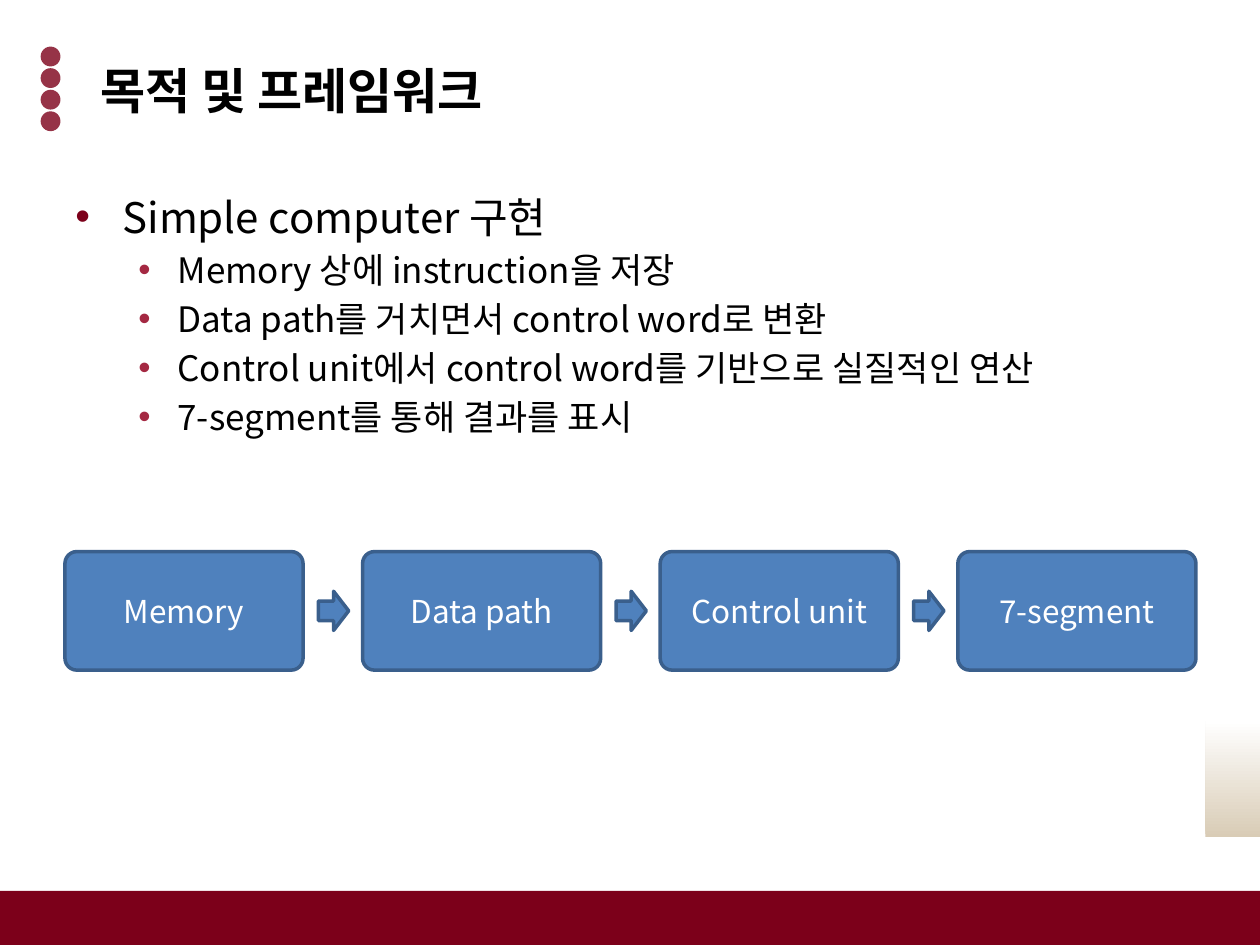
import pptx
import pptx.dml.color
import pptx.enum.shapes
import pptx.enum.text
import pptx.oxml
import pptx.oxml.ns
import pptx.util
from lxml import etree

Cm, Pt = pptx.util.Cm, pptx.util.Pt
RGBColor = pptx.dml.color.RGBColor
SHAPE = pptx.enum.shapes.MSO_SHAPE
ANCHOR = pptx.enum.text.MSO_ANCHOR
ALIGN = pptx.enum.text.PP_ALIGN
qn = pptx.oxml.ns.qn

FONT = "Noto Sans CJK KR"
MAROON = RGBColor(0x7C, 0x00, 0x1A)
CRIMSON = RGBColor(0xA4, 0x28, 0x42)
SAND = RGBColor(0xD9, 0xCC, 0xB6)
BLUE = RGBColor(0x4F, 0x81, 0xBD)
NAVY = RGBColor(0x3A, 0x5F, 0x8C)
BLACK = RGBColor(0, 0, 0)
WHITE = RGBColor(255, 255, 255)


def add_shape(kind, left, top, width, height, fill, line=None):
    sp = s.shapes.add_shape(kind, Cm(left), Cm(top), Cm(width), Cm(height))
    sp.shadow.inherit = False
    sp.fill.solid()
    sp.fill.fore_color.rgb = fill
    if line is None:
        sp.line.fill.background()
    else:
        sp.line.color.rgb = line
        sp.line.width = Pt(2)
    return sp


def format_text(p, size, color, bold=False):
    for r in p.runs:
        r.font.size = Pt(size)
        r.font.bold = bold
        r.font.color.rgb = color
        r.font.name = FONT
        r.font._element.set("kern", "0")  # no pair kerning
        etree.SubElement(r.font._element, qn("a:ea")).set("typeface", FONT)


prs = pptx.Presentation()
prs.slide_width, prs.slide_height = Cm(25.4), Cm(19.05)
s = prs.slides.add_slide(prs.slide_layouts[6])

# Footer band and fading corner block
add_shape(SHAPE.RECTANGLE, 0, 17.96, 25.4, 1.09, MAROON)
sp = add_shape(SHAPE.RECTANGLE, 24.3, 14.53, 1.1, 2.34, SAND)
sp.fill.gradient()
sp.fill.gradient_angle = 90
for stop, color in zip(sp.fill.gradient_stops, (SAND, WHITE)):
    stop.color.rgb = color

# Column of translucent dots
for i in range(4):
    sp = add_shape(SHAPE.OVAL, 0.82, 0.94 + 0.435 * i, 0.4, 0.4, MAROON)
    color = sp._element.spPr.find(qn("a:solidFill"))[0]
    etree.SubElement(color, qn("a:alpha")).set("val", "80000")

# Title
sp = s.shapes.add_textbox(Cm(1.27), Cm(1.02), Cm(22.86), Cm(1.6))
tf = sp.text_frame
tf.word_wrap = True
tf.vertical_anchor = ANCHOR.MIDDLE
p = tf.paragraphs[0]
p.text = "목적 및 프레임워크"
p._p.get_or_add_pPr().set("marL", str(Cm(0.5)))
format_text(p, 28, BLACK, bold=True)

# Bullet list: level, text
items = [
    (0, "Simple computer 구현"),
    (1, "Memory 상에 instruction을 저장"),
    (1, "Data path를 거치면서 control word로 변환"),
    (1, "Control unit에서 control word를 기반으로 실질적인 연산"),
    (1, "7-segment를 통해 결과를 표시"),
]
# Per level: left margin, hanging indent, size, bullet colour
levels = [(0.95, 0.95, 24, MAROON), (2.06, 0.79, 20, CRIMSON)]
sp = s.shapes.add_textbox(Cm(1.27), Cm(3.73), Cm(22.86), Cm(13.28))
tf = sp.text_frame
tf.word_wrap = True
for i, (level, text) in enumerate(items):
    margin, hang, size, color = levels[level]
    p = tf.paragraphs[0] if i == 0 else tf.add_paragraph()
    p.text = text
    p.level = level
    if i:
        p.space_before = Pt(4)
    pPr = p._p.get_or_add_pPr()
    pPr.set("marL", str(Cm(margin)))
    pPr.set("indent", str(-Cm(hang)))
    bullet_color = etree.SubElement(pPr, qn("a:buClr"))
    etree.SubElement(bullet_color, qn("a:srgbClr")).set("val", str(color))
    etree.SubElement(pPr, qn("a:buFont")).set("typeface", "Arial")
    etree.SubElement(pPr, qn("a:buChar")).set("char", "•")
    format_text(p, size, BLACK)

# Process boxes with an arrow in each gap
steps = ["Memory", "Data path", "Control unit", "7-segment"]
pitch = 6
for i, step in enumerate(steps):
    sp = add_shape(SHAPE.ROUNDED_RECTANGLE, 1.31 + pitch * i, 11.12, 4.8, 2.39, BLUE, NAVY)
    sp.adjustments[0] = 0.1
    tf = sp.text_frame
    tf.vertical_anchor = ANCHOR.MIDDLE
    p = tf.paragraphs[0]
    p.text = step
    p.alignment = ALIGN.CENTER
    format_text(p, 18, WHITE)
for i in range(len(steps) - 1):
    add_shape(SHAPE.RIGHT_ARROW, 6.42 + pitch * i, 11.92, 0.61, 0.79, BLUE, NAVY)

prs.save("out.pptx")
